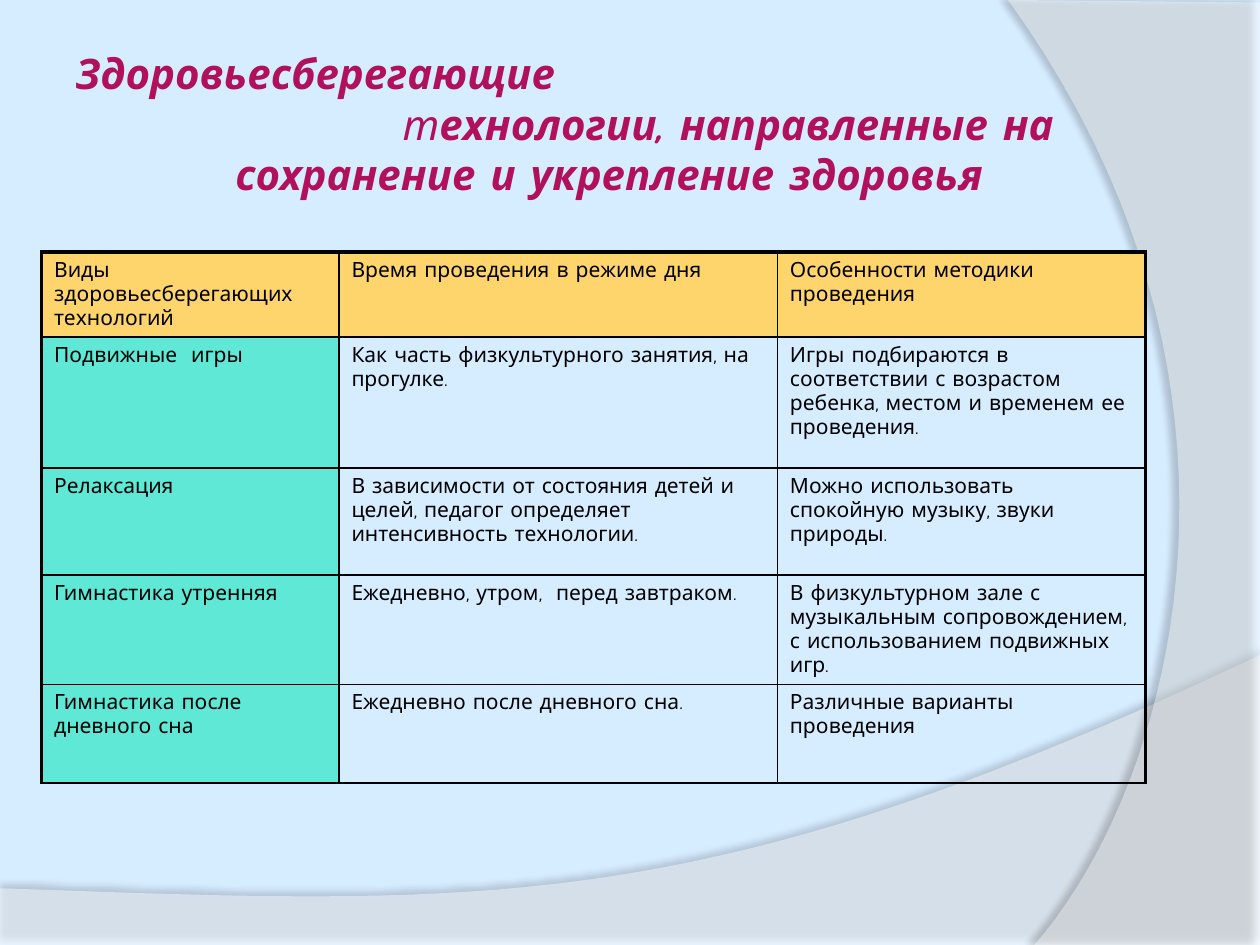
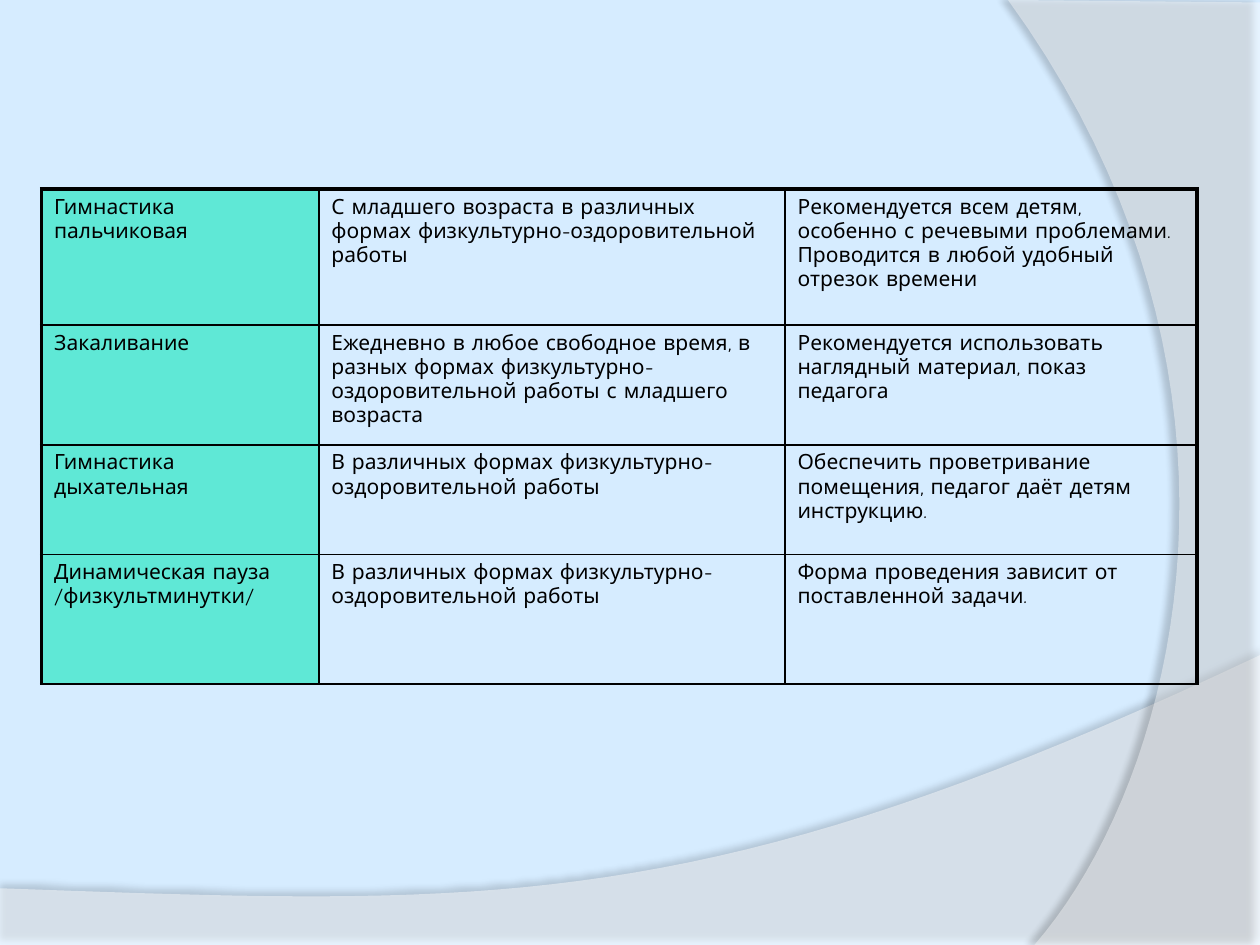
from lxml import etree
from pptx import Presentation
from pptx import util as u
from pptx.dml.color import RGBColor
from pptx.enum import text
from pptx.oxml import ns

SKY = RGBColor(0xD6, 0xEC, 0xFF)
WHITE = RGBColor(0xFF, 0xFF, 0xFF)
BLACK = RGBColor(0, 0, 0)
GOLD = RGBColor(0xFE, 0xD4, 0x6C)
MINT = RGBColor(0x5F, 0xE8, 0xD6)
BERRY = RGBColor(0xB0, 0x10, 0x5C)
FONT = "Comic Neue"
THICK, THIN = 2.25, 1


def add(node, tag, **attrs):
    """Append a drawing element and return it."""
    return etree.SubElement(node, ns.qn(tag), {k: str(v) for k, v in attrs.items()})


def bezier(ends, steps=40):
    """Return the points of a cubic curve after its start."""
    a, b, c, d = ends
    curve = []
    for i in range(1, steps + 1):
        t = i / steps
        s = 1 - t
        curve.append(tuple(s**3 * p + 3 * s * s * t * q + 3 * s * t * t * r + t**3 * w
                           for p, q, r, w in zip(a, b, c, d)))
    return curve


WAVE = [(0, 7.05), (0, 7.5), (10, 7.5), (10, 5.2)]
WAVE += bezier([(10, 5.2), (5.59, 7.29), (3.91, 7.19), (0, 7.05)])
ARC = [(10, 0.02), (10, 7.5), (8.21, 7.5)]
ARC += bezier([(8.21, 7.5), (9.35, 6.19), (10.18, 3), (8, 0)])


class Deck:
    """Hold the shared style and the current slide."""

    def __init__(self):
        """Start a blank deck with the shared background."""
        self.prs = Presentation()
        self.prs.slide_width, self.prs.slide_height = u.Inches(10), u.Inches(7.5)
        fill = self.prs.slide_master.background.fill
        fill.solid()
        fill.fore_color.rgb = SKY

    def page(self):
        """Open a slide with both pale bands."""
        self.slide = self.prs.slides.add_slide(self.prs.slide_layouts[6])
        self.band(WAVE, 45, 35, 3.5, 270)
        self.band(ARC, 40, 45, 4, 180)

    def band(self, points, alpha, shade, dist, angle):
        """Draw a translucent curved band with a soft shadow."""
        spots = [(u.Inches(x), u.Inches(y)) for x, y in points]
        pen = self.slide.shapes.build_freeform(*spots[0])
        pen.add_line_segments(spots[1:], close=True)
        shape = pen.convert_to_shape()
        shape.fill.solid()
        shape.fill.fore_color.rgb = WHITE
        props = shape.element.spPr
        add(props.find(".//" + ns.qn("a:srgbClr")), "a:alpha", val=alpha * 1000)
        shape.line.fill.background()
        shape.shadow.inherit = False
        glow = add(props.find(ns.qn("a:effectLst")), "a:outerShdw", blurRad=u.Pt(4),
                   dist=u.Pt(dist), dir=angle * 60000, rotWithShape=0)
        add(add(glow, "a:srgbClr", val=BLACK), "a:alpha", val=shade * 1000)

    def run(self, para, words, size, color, bold=False, slant=False):
        """Add one styled run."""
        run = para.add_run()
        run.text = words
        font = run.font
        font.name, font.size = FONT, u.Pt(size)
        font.bold, font.italic = bold, slant
        font.color.rgb = color

    def title(self, lines):
        """Write the title from lines of alignment, indent and runs."""
        box = self.slide.shapes.add_textbox(u.Inches(0.5), u.Inches(0.33),
                                            u.Inches(8.67), u.Inches(1.31))
        frame = box.text_frame
        frame.word_wrap = True
        for i, (align, indent, runs) in enumerate(lines):
            para = frame.add_paragraph() if i else frame.paragraphs[0]
            para.alignment = align
            if indent:
                para._p.get_or_add_pPr().set("marL", str(u.Inches(indent)))
            for words, bold in runs:
                self.run(para, words, 24, BERRY, bold, True)

    def edge(self, cell, thick):
        """Draw cell borders, heavy on the sides named in thick."""
        props = cell._tc.get_or_add_tcPr()
        for side in "LRTB":
            line = add(props, "a:ln" + side, w=u.Pt(THICK if side in thick else THIN))
            add(add(line, "a:solidFill"), "a:srgbClr", val=BLACK)

    def table(self, top, cols, rows, data, head=False):
        """Add a table with a mint first column and an optional gold head."""
        frame = self.slide.shapes.add_table(len(rows), len(cols), u.Inches(0.33), u.Inches(top),
                                            u.Inches(sum(cols)), u.Inches(sum(rows)))
        grid = frame.table
        grid.first_row = grid.horz_banding = False
        for col, width in zip(grid.columns, cols):
            col.width = u.Inches(width)
        for row, height in zip(grid.rows, rows):
            row.height = u.Inches(height)
        for r, line in enumerate(data):
            for c, words in enumerate(line):
                cell = grid.cell(r, c)
                thick = ("T" if r == 0 else "") + ("L" if c == 0 else "")
                self.edge(cell, thick + ("R" if c == len(cols) - 1 else ""))
                tint = GOLD if head and r == 0 else MINT if c == 0 else None
                if tint is None:
                    cell.fill.background()
                else:
                    cell.fill.solid()
                    cell.fill.fore_color.rgb = tint
                self.run(cell.text_frame.paragraphs[0], words, 12, BLACK)


GAMES = [
    ("Виды здоровьесберегающих технологий", "Время проведения в режиме дня",
     "Особенности методики проведения"),
    ("Подвижные  игры", "Как часть физкультурного занятия, на прогулке.",
     "Игры подбираются в соответствии с возрастом ребенка, местом и временем ее проведения."),
    ("Релаксация",
     "В зависимости от состояния детей и целей, педагог определяет интенсивность технологии.",
     "Можно использовать спокойную музыку, звуки природы."),
    ("Гимнастика утренняя", "Ежедневно, утром,  перед завтраком.",
     "В физкультурном зале с музыкальным сопровождением, с использованием подвижных игр."),
    ("Гимнастика после дневного сна", "Ежедневно после дневного сна.",
     "Различные варианты проведения"),
]
FORMS = "В различных формах физкультурно-оздоровительной работы"
DRILLS = [
    ("Гимнастика пальчиковая",
     "С младшего возраста в различных формах физкультурно-оздоровительной работы",
     "Рекомендуется всем детям, особенно с речевыми проблемами. "
     "Проводится в любой удобный отрезок времени"),
    ("Закаливание",
     "Ежедневно в любое свободное время, в разных формах "
     "физкультурно-оздоровительной работы с младшего возраста",
     "Рекомендуется использовать наглядный материал, показ педагога"),
    ("Гимнастика дыхательная", FORMS,
     "Обеспечить проветривание помещения, педагог даёт детям инструкцию."),
    ("Динамическая пауза /физкультминутки/", FORMS,
     "Форма проведения зависит от поставленной задачи."),
]


def main():
    """Build both slides and save them."""
    deck = Deck()
    left, mid = text.PP_ALIGN.LEFT, text.PP_ALIGN.CENTER

    deck.page()
    deck.table(2, [2.36, 3.48, 2.92], [0.47, 1.04, 0.85, 0.85, 0.78], GAMES, head=True)
    deck.title([
        (left, 0, [("Здоровьесберегающие", True)]),
        (mid, 1.89, [("т", False), ("ехнологии, направленные на", True)]),
        (mid, 0, [("сохранение и укрепление здоровья", True)]),
    ])

    deck.page()
    deck.table(1.5, [2.2, 3.7, 3.27], [1.08, 0.95, 0.87, 1.03], DRILLS)
    deck.prs.save("out.pptx")


if __name__ == "__main__":
    main()
